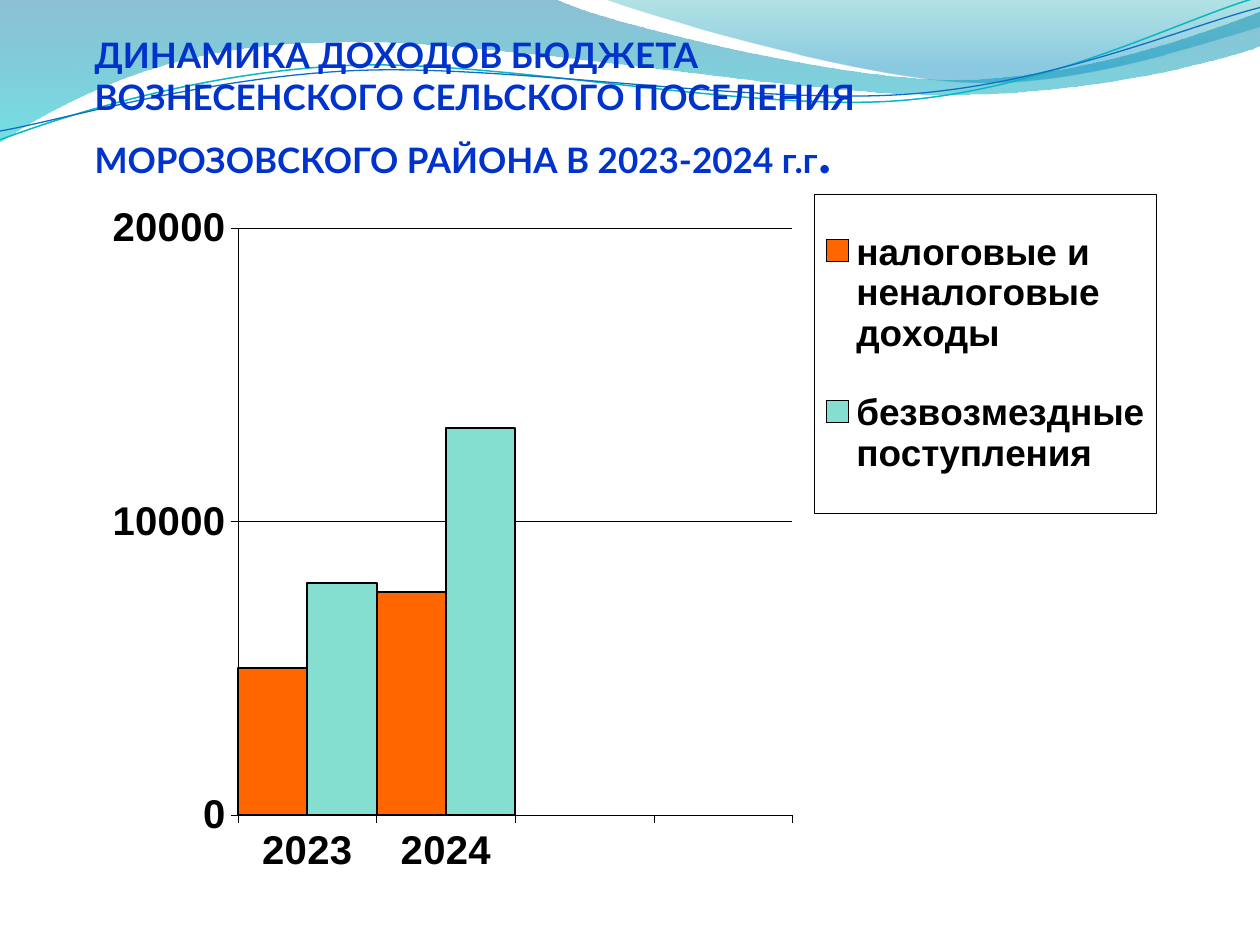
from lxml import etree
from pptx import Presentation
from pptx.chart.data import CategoryChartData as ChartData
from pptx.dml.color import RGBColor as RGB
from pptx.enum.chart import XL_CHART_TYPE as Kind, XL_LEGEND_POSITION as Side
from pptx.enum.chart import XL_TICK_MARK as Tick
from pptx.enum.text import MSO_ANCHOR as Anchor
from pptx.oxml import parse_xml
from pptx.oxml.ns import nsdecls, qn
from pptx.util import Inches, Pt

BLACK = RGB(0, 0, 0)
BLUE = RGB(0x00, 0x33, 0xCC)
ORANGE = RGB(0xFF, 0x66, 0x00)
MINT = RGB(0x85, 0xDF, 0xD0)
TEAL = RGB(0x0A, 0xB8, 0xBF)
AZURE = RGB(0x0F, 0x6F, 0xC6)
UNITS = 1000  # drawing units per inch

# Gradient stops: position, colour, opacity (percent)
BAND = [(0, RGB(0x00, 0x74, 0xA1), 45), (100, RGB(0x00, 0xC6, 0xCF), 55)]
CREST = [(0, RGB(0x00, 0xA1, 0xA9), 30), (80, RGB(0x00, 0x8B, 0xBF), 45)]

# Outlines in inches, one tuple a step: one point is a line, three a Bezier curve
BAND_PTS = [
    [(0, -0.01)], [(4.4, -0.01)],
    [(4.76, 0.17), (6.64, 0.63), (7.58, 0.63)],
    [(8.53, 0.63), (9.58, 0.26), (10, 0.09)], [(10.01, 0.36)],
    [(9.83, 0.44), (8.7, 0.76), (7.46, 0.75)],
    [(6.22, 0.75), (3.82, 0.28), (2.57, 0.34)],
    [(1.29, 0.35), (0.46, 0.83), (-0.01, 1.13)], [(0, -0.01)]]
CREST_PTS = [
    [(4.79, -0.01)], [(5.09, 0.11), (6.82, 0.62), (7.69, 0.65)],
    [(8.56, 0.69), (9.61, 0.32), (10, 0.21)], [(10, 0)], [(4.79, -0.01)]]
TEAL_PTS = [
    [(0, 1.11)], [(0.48, 0.93), (1.58, 0.57), (2.77, 0.52)],
    [(3.95, 0.47), (5.93, 0.89), (7.13, 0.8)],
    [(8.33, 0.71), (9.38, 0.15), (9.98, -0.02)]]
AZURE_PTS = [
    [(0, 1.04)], [(0.47, 0.96), (1.64, 0.61), (2.83, 0.56)],
    [(4.03, 0.51), (5.97, 0.83), (7.17, 0.75)],
    [(8.36, 0.67), (9.41, 0.21), (10, 0.06)]]


def outline(slide, steps, close):
    """Draw the step ends as a freeform, then bend the curved steps."""
    steps = [[(round(x * UNITS), round(y * UNITS)) for x, y in step]
             for step in steps]
    ends = [step[-1] for step in steps]
    pen = slide.shapes.build_freeform(*ends[0], scale=Inches(1) / UNITS)
    pen.add_line_segments(ends[1:], close=close)
    shape = pen.convert_to_shape()
    shape.shadow.inherit = False
    left, top = (min(axis) for axis in zip(*ends))
    lines = list(shape._element.iter(qn("a:lnTo")))
    for line, step in zip(lines, steps[1:]):
        if len(step) == 3:
            bend = etree.Element(qn("a:cubicBezTo"))
            for x, y in step:
                etree.SubElement(bend, qn("a:pt"), x=str(x - left), y=str(y - top))
            line.getparent().replace(line, bend)
    return shape


def shade(shape, stops):
    """Fill from top to bottom with half-clear colours."""
    shape.line.fill.background()
    shape.fill.gradient()
    grad = shape.fill._xPr.find(qn("a:gradFill"))
    rows = "".join(
        f'<a:gs pos="{pos * 1000}"><a:srgbClr val="{tint}">'
        f'<a:alpha val="{alpha * 1000}"/></a:srgbClr></a:gs>'
        for pos, tint, alpha in stops)
    new = parse_xml(f'<a:gradFill {nsdecls("a")} rotWithShape="1"><a:gsLst>{rows}'
                    '</a:gsLst><a:lin ang="5400000" scaled="0"/></a:gradFill>')
    grad.getparent().replace(grad, new)


def waves(slide):
    for steps, stops in ((BAND_PTS, BAND), (CREST_PTS, CREST)):
        shade(outline(slide, steps, True), stops)
    for steps, tint, width in ((TEAL_PTS, TEAL, 0.85), (AZURE_PTS, AZURE, 0.75)):
        shape = outline(slide, steps, False)
        shape.fill.background()
        stroke(shape.line, tint, width)


def stroke(line, tint, width):
    line.color.rgb = tint
    line.width = Pt(width)


def style(font, size, tint, face):
    font.size, font.bold, font.name = Pt(size), True, face
    font.color.rgb = tint


def title(slide, box):
    frame = slide.shapes.add_textbox(*map(Inches, box)).text_frame
    frame.word_wrap = True
    frame.vertical_anchor = Anchor.BOTTOM
    frame.margin_left = frame.margin_right = frame.margin_bottom = 0
    frame.margin_top = Inches(0.05)
    frame.text = ("ДИНАМИКА ДОХОДОВ БЮДЖЕТА \vВОЗНЕСЕНСКОГО СЕЛЬСКОГО ПОСЕЛЕНИЯ "
                  "МОРОЗОВСКОГО РАЙОНА В 2023-2024 г.г")
    para = frame.paragraphs[0]
    for run in para.runs:
        style(run.font, 20, BLUE, "Lato")
    dot = para.add_run()
    dot.text = "."
    style(dot.font, 32, BLUE, "Lato")


def place(part, box, area, inner=False):
    """Fix a chart part: its area in inches becomes shares of the chart's box."""
    left, top, wide, high = box
    x, y, w, h = area
    shares = ((x - left) / wide, (y - top) / high, w / wide, h / high)
    old = part.find(qn("c:layout"))
    if old is not None:
        part.remove(old)
    layout = etree.Element(qn("c:layout"))
    manual = etree.SubElement(layout, qn("c:manualLayout"))
    rows = [("layoutTarget", "inner")] if inner else []
    rows += [("xMode", "edge"), ("yMode", "edge"), *zip("xywh", shares)]
    for tag, val in rows:
        etree.SubElement(manual, qn(f"c:{tag}")).set("val", str(val))
    part.insert(0 if inner else 1, layout)


def graph(slide, box):
    data = ChartData()
    data.categories = ["2023", "2024", "", ""]
    data.add_series("налоговые и неналоговые доходы", (5000, 7600, None, None))
    data.add_series("безвозмездные поступления", (7900, 13200, None, None))
    chart = slide.shapes.add_chart(
        Kind.COLUMN_CLUSTERED, *map(Inches, box), data).chart
    chart.has_title = False
    style(chart.font, 22.9, BLACK, "Arial")

    # Columns
    plot = chart.plots[0]
    plot.gap_width, plot.overlap = 0, 0
    plot.vary_by_categories = False
    for series, tint in zip(plot.series, (ORANGE, MINT)):
        series.format.fill.solid()
        series.format.fill.fore_color.rgb = tint
        stroke(series.format.line, BLACK, 1.21)

    # Axes
    value = chart.value_axis
    value.minimum_scale, value.maximum_scale = 0, 20000
    value.major_unit = 10000
    value.has_major_gridlines = True
    stroke(value.major_gridlines.format.line, BLACK, 0.3)
    for axis in (chart.category_axis, value):
        axis.major_tick_mark = Tick.OUTSIDE
        stroke(axis.format.line, BLACK, 0.3)
        style(axis.tick_labels.font, 22.9, BLACK, "Arial")

    # Legend
    chart.has_legend = True
    legend = chart.legend
    legend.position = Side.RIGHT
    legend.include_in_layout = False
    style(legend.font, 21.1, BLACK, "Arial")
    frame = parse_xml(f'<c:spPr {nsdecls("c", "a")}><a:noFill/><a:ln w="3810"><a:solidFill>'
                      f'<a:srgbClr val="{BLACK}"/></a:solidFill></a:ln></c:spPr>')
    legend._element.find(qn("c:txPr")).addprevious(frame)
    place(legend._element, box, (6.46, 1.54, 2.72, 2.53))
    place(chart._chartSpace.chart.plotArea, box, (1.89, 1.81, 4.4, 4.66), inner=True)


def main():
    deck = Presentation()
    deck.slide_width, deck.slide_height = Inches(10), Inches(7.5)
    slide = deck.slides.add_slide(deck.slide_layouts[6])
    waves(slide)
    title(slide, (0.75, 0.17, 7.51, 1.3))
    graph(slide, (0.72, 1.52, 8.54, 5.52))
    deck.save("out.pptx")


if __name__ == "__main__":
    main()
